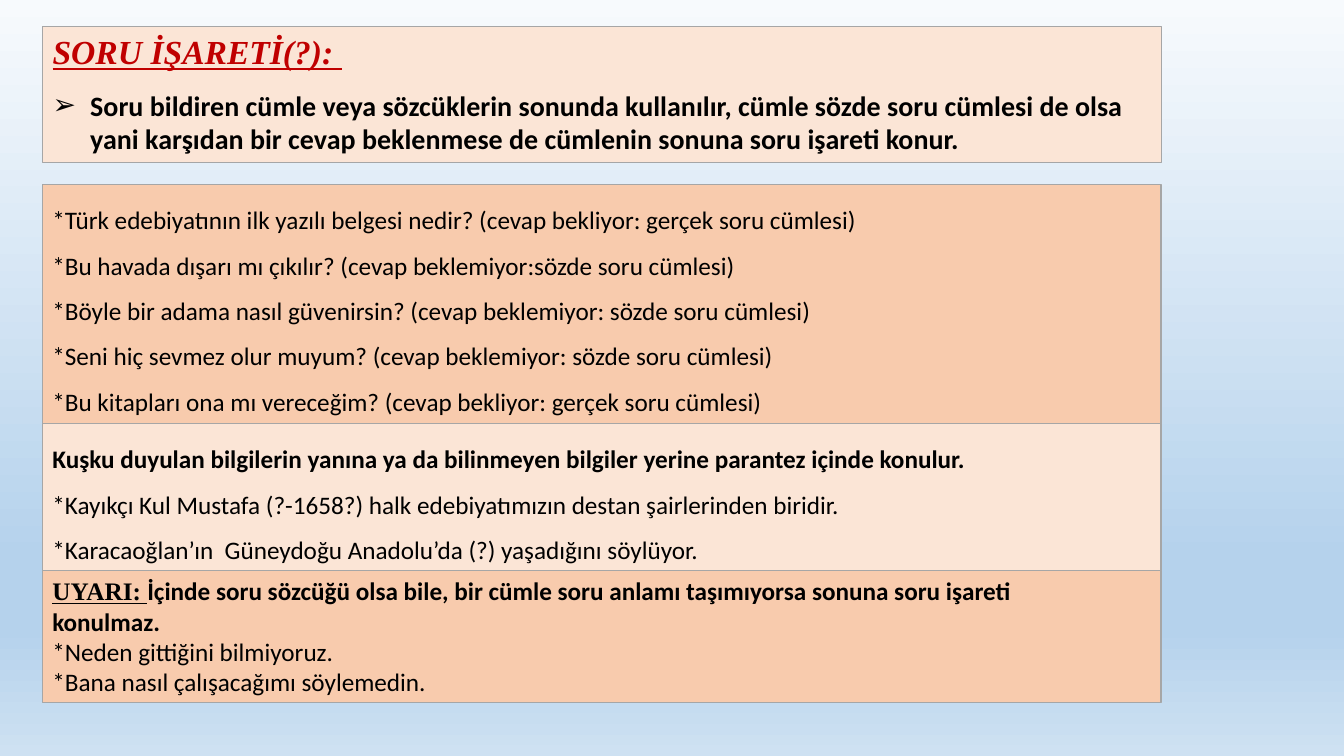
from lxml.etree import SubElement
from pptx import Presentation
from pptx.dml.color import RGBColor
from pptx.enum.shapes import MSO_SHAPE
from pptx.enum.text import MSO_ANCHOR, MSO_AUTO_SIZE, PP_ALIGN
from pptx.oxml.ns import qn
from pptx.util import Cm, Pt

LEFT, WIDTH = 1.07, 28.19
LIGHT, DARK = "FBE5D6", "F8CBAD"
BACKGROUND_STOPS = [(0, "F7FAFD"), (74, "B5D2EC"), (83, "B5D2EC"), (100, "CEE1F2")]

PLAIN = {"name": "Calibri", "size": Pt(18), "bold": False, "italic": False, "underline": False}
BOLD = {**PLAIN, "bold": True}
RULE = {**BOLD, "size": Pt(20)}
WARNING = {**BOLD, "name": "Times New Roman", "underline": True}
HEADING = {**WARNING, "size": Pt(24), "italic": True}

EXAMPLES = [
    "*Türk edebiyatının ilk yazılı belgesi nedir? (cevap bekliyor: gerçek soru cümlesi)",
    "*Bu havada dışarı mı çıkılır? (cevap beklemiyor:sözde soru cümlesi)",
    "*Böyle bir adama nasıl güvenirsin? (cevap beklemiyor: sözde soru cümlesi)",
    "*Seni hiç sevmez olur muyum? (cevap beklemiyor: sözde soru cümlesi)",
    "*Bu kitapları ona mı vereceğim? (cevap bekliyor: gerçek soru cümlesi)",
]
DOUBTS = [
    "*Kayıkçı Kul Mustafa (?-1658?) halk edebiyatımızın destan şairlerinden biridir.",
    "*Karacaoğlan’ın  Güneydoğu Anadolu’da (?) yaşadığını söylüyor.",
]
NOT_QUESTIONS = ["*Neden gittiğini bilmiyoruz.", "*Bana nasıl çalışacağımı söylemedin."]


def colour(value):
    return RGBColor.from_string(value)


def apply(target, settings):
    for name, value in settings.items():
        setattr(target, name, value)


def paint_background(page):
    fill = page.background.fill
    fill.gradient()
    fill.gradient_angle = 270
    stops = page.element.find(".//" + qn("a:gsLst"))
    for stop in list(stops):
        stops.remove(stop)
    for percent, value in BACKGROUND_STOPS:
        stop = SubElement(stops, qn("a:gs"), pos=str(percent * 1000))
        SubElement(stop, qn("a:srgbClr"), val=value)


def style_box(box, top, height, fill):
    apply(box, {"left": Cm(LEFT), "top": Cm(top), "width": Cm(WIDTH), "height": Cm(height)})
    box.fill.solid()
    box.fill.fore_color.rgb = colour(fill)
    box.line.color.rgb = colour("A6A6A6")
    box.line.width = Pt(0.75)
    apply(box.text_frame, {
        "word_wrap": True,
        "auto_size": MSO_AUTO_SIZE.SHAPE_TO_FIT_TEXT,
        "vertical_anchor": MSO_ANCHOR.TOP,
    })


def add_box(page, top, height, fill):
    box = page.shapes.add_shape(MSO_SHAPE.RECTANGLE, Cm(LEFT), Cm(top), Cm(WIDTH), Cm(height))
    box.shadow.inherit = False
    style_box(box, top, height, fill)
    return box


def add_span(para, text, font, value="000000"):
    span = para.add_run()
    span.text = text
    apply(span.font, font)
    span.font.color.rgb = colour(value)


def add_para(box, text, font, value="000000", spacing=1.0, after=0):
    frame = box.text_frame
    para = frame.paragraphs[0] if not frame.text else frame.add_paragraph()
    apply(para, {"alignment": PP_ALIGN.LEFT, "line_spacing": spacing, "space_after": Pt(after)})
    add_span(para, text, font, value)
    return para


def add_arrow_bullet(para):
    properties = para._p.get_or_add_pPr()
    properties.set("marL", str(Cm(0.95)))
    properties.set("indent", str(-Cm(0.95)))
    SubElement(properties, qn("a:buFont"), typeface="Arial")
    SubElement(properties, qn("a:buChar"), char="➢")


def main():
    deck = Presentation()
    apply(deck, {"slide_width": Cm(33.87), "slide_height": Cm(19.05)})
    page = deck.slides.add_slide(deck.slide_layouts[5])
    paint_background(page)

    title = page.shapes.title
    style_box(title, 0.66, 3.43, LIGHT)
    add_para(title, "SORU İŞARETİ(?): ", HEADING, "C00000", after=12)
    add_arrow_bullet(add_para(
        title,
        "Soru bildiren cümle veya sözcüklerin sonunda kullanılır, cümle sözde soru cümlesi de olsa "
        "yani karşıdan bir cevap beklenmese de cümlenin sonuna soru işareti konur.",
        RULE,
    ))

    examples = add_box(page, 4.65, 6.02, DARK)
    for text in EXAMPLES:
        add_para(examples, text, PLAIN, spacing=1.5)

    doubts = add_box(page, 10.67, 3.71, LIGHT)
    add_para(
        doubts,
        "Kuşku duyulan bilgilerin yanına ya da bilinmeyen bilgiler yerine parantez içinde konulur.",
        BOLD,
        spacing=1.5,
    )
    for text in DOUBTS:
        add_para(doubts, text, PLAIN, spacing=1.5)

    warning = add_box(page, 14.38, 3.33, DARK)
    para = add_para(warning, "UYARI: ", WARNING)
    add_span(
        para,
        "İçinde soru sözcüğü olsa bile, bir cümle soru anlamı taşımıyorsa sonuna soru işareti",
        BOLD,
    )
    para.add_line_break()
    add_span(para, "konulmaz.", BOLD)
    for text in NOT_QUESTIONS:
        add_para(warning, text, PLAIN)

    deck.save("out.pptx")


if __name__ == "__main__":
    main()
